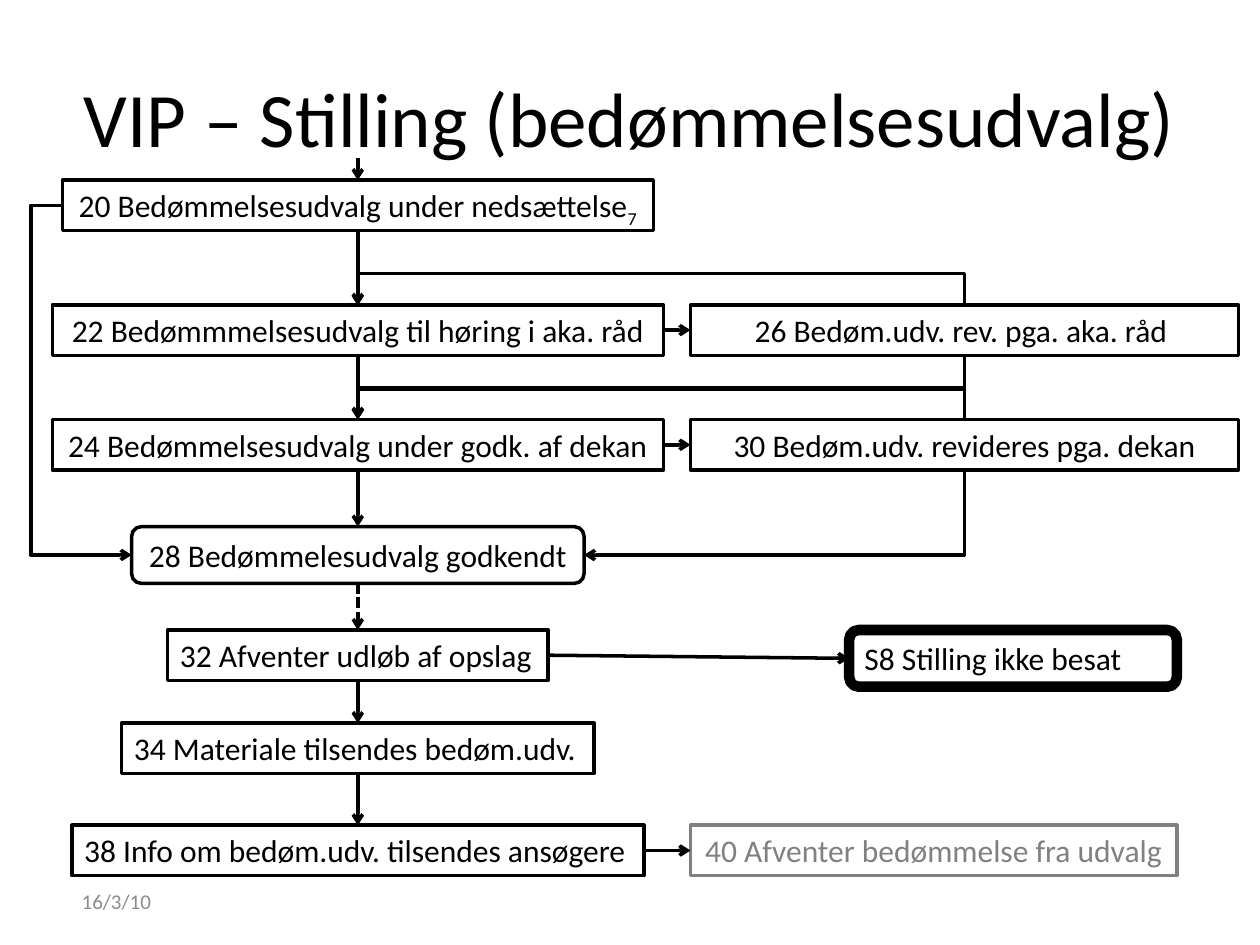
from lxml.etree import SubElement
from pptx import Presentation
from pptx.dml.color import RGBColor as RGB
from pptx.enum.dml import MSO_LINE as DASH
from pptx.enum.shapes import MSO_CONNECTOR as CONN, MSO_SHAPE as SHAPE
from pptx.enum.text import MSO_ANCHOR as ANCHOR, MSO_AUTO_SIZE as FIT, PP_ALIGN as ALIGN
from pptx.oxml.ns import qn
from pptx.util import Inches, Pt

THEME = {
    "font": "Calibri",
    "ink": RGB(0x00, 0x00, 0x00),
    "muted": RGB(0x80, 0x80, 0x80),
    "date": RGB(0x8C, 0x8C, 0x8C),
    "title": Pt(44), "body": Pt(18), "small": Pt(12),
    "line": Pt(2), "heavy": Pt(6),
}

prs = Presentation()
prs.slide_width, prs.slide_height = Inches(10), Inches(7.5)
U = prs.slide_width / 100
s = prs.slides.add_slide(prs.slide_layouts[5])


def write(sp, text, size, color, align, **frame):
    tf = sp.text_frame
    for key, value in frame.items():
        setattr(tf, key, value)
    p = tf.paragraphs[0]
    p.alignment = align
    r = p.add_run()
    r.text = text
    fmt = {"name": THEME["font"], "size": THEME[size]}
    for key, value in fmt.items():
        setattr(r.font, key, value)
    r.font.color.rgb = THEME[color]
    return p


def style(c, dash=None):
    c.line.color.rgb = THEME["ink"]
    c.line.width = THEME["line"]
    if dash:
        c.line.dash_style = dash
    SubElement(c.line._get_or_add_ln(), qn("a:tailEnd"), type="arrow")
    SubElement(c.element.spPr, qn("a:effectLst"))


t = s.shapes.title
place = {"left": 5, "top": 3, "width": 90, "height": 12.5}
for key, value in place.items():
    setattr(t, key, int(value * U))
write(t, "VIP – Stilling (bedømmelsesudvalg)", "title", "ink", ALIGN.CENTER,
      vertical_anchor=ANCHOR.MIDDLE)

AXIS, RIGHT, BOX_H, ROUND_H = 28.4, 54.8, 4, 4.5
ROWS = {"20": 14.3, "22": 24.2, "24": 33.3, "28": 41.8, "32": 50, "34": 57.4, "38": 65.5}
C, L = ALIGN.CENTER, ALIGN.LEFT
boxes = [
    ("20", "Bedømmelsesudvalg under nedsættelse", "20", None, 46.9, C, False),
    ("22", "Bedømmmelsesudvalg til høring i aka. råd", "22", None, 48.5, C, False),
    ("24", "Bedømmelsesudvalg under godk. af dekan", "24", None, 48.5, C, False),
    ("28", "Bedømmelesudvalg godkendt", "28", None, 35.9, C, False),
    ("32", "Afventer udløb af opslag", "32", None, 30.2, L, False),
    ("34", "Materiale tilsendes bedøm.udv.", "34", None, 37.5, L, False),
    ("38", "Info om bedøm.udv. tilsendes ansøgere", "38", None, 45.4, L, True),
    ("26", "Bedøm.udv. rev. pga. aka. råd ", "22", RIGHT, 43.5, C, True),
    ("30", "Bedøm.udv. revideres pga. dekan", "24", RIGHT, 43.5, C, True),
    ("40", "Afventer bedømmelse fra udvalg", "38", RIGHT, 38.6, C, False),
    ("S8", "Stilling ikke besat", "32", 67.4, 26, L, True),
]
steps = {}
for key, label, row, left, width, align, wrap in boxes:
    rounded = key in ("28", "S8")
    left = AXIS - width / 2 if left is None else left
    kind = SHAPE.FLOWCHART_ALTERNATE_PROCESS if rounded else SHAPE.FLOWCHART_PROCESS
    height = ROUND_H if rounded else BOX_H
    sp = s.shapes.add_shape(kind, *(int(v * U) for v in (left, ROWS[row], width, height)))
    sp.shadow.inherit = False
    sp.fill.background()
    color = "muted" if key == "40" else "ink"
    sp.line.color.rgb = THEME[color]
    sp.line.width = THEME["heavy" if key == "S8" else "line"]
    p = write(sp, f"{key} {label}", "body", color, align, word_wrap=wrap,
              auto_size=FIT.SHAPE_TO_FIT_TEXT, vertical_anchor=ANCHOR.TOP)
    if key == "20":
        r = p.add_run()
        r.text = "7"
        for attr, value in {"name": THEME["font"], "size": THEME["body"]}.items():
            setattr(r.font, attr, value)
        r.font.color.rgb = THEME["ink"]
        r.font._element.set("baseline", "-25000")
    steps[key] = sp

TOP, WEST, BOTTOM, EAST = range(4)
c = s.shapes.add_connector(CONN.STRAIGHT, *(int(v * U) for v in (AXIS, 12.5, AXIS, ROWS["20"])))
c.end_connect(steps["20"], TOP)
style(c)

chain = list(ROWS)
links = [(a, BOTTOM, b, TOP) for a, b in zip(chain, chain[1:])]
links += [(a, EAST, b, WEST) for a, b in (("22", "26"), ("24", "30"), ("32", "S8"), ("38", "40"))]
for a, start, b, end in links:
    c = s.shapes.add_connector(CONN.STRAIGHT, 0, 0, 0, 0)
    c.begin_connect(steps[a], start)
    c.end_connect(steps[b], end)
    style(c, DASH.SQUARE_DOT if a == "28" else None)

elbows = [
    ("20", WEST, "28", WEST, 0, "", "bentConnector3", -2.5),
    ("26", TOP, "22", TOP, 270, "HV", "bentConnector3", -2.5),
    ("26", BOTTOM, "24", TOP, 90, "", "bentConnector3", 2.55),
    ("30", TOP, "24", TOP, 270, "V", "bentConnector3", 2.5),
    ("30", BOTTOM, "28", EAST, 90, "", "bentConnector2", None),
]
for a, start, b, end, turn, flips, preset, detour in elbows:
    c = s.shapes.add_connector(CONN.ELBOW, 0, 0, 0, 0)
    c.begin_connect(steps[a], start)
    c.end_connect(steps[b], end)
    mid_x, mid_y = (c.begin_x + c.end_x) / 2, (c.begin_y + c.end_y) / 2
    w, h = abs(c.end_x - c.begin_x), abs(c.end_y - c.begin_y)
    if turn:
        w, h = max(h, int(0.1 * U)), w
    box = {"left": mid_x - w / 2, "top": mid_y - h / 2, "width": w, "height": h}
    for key, value in box.items():
        setattr(c, key, int(value))
    xfrm, geom = c.element.spPr.find(qn("a:xfrm")), c.element.spPr.find(qn("a:prstGeom"))
    xfrm.set("rot", str(turn * 60000))
    for axis in "HV":
        xfrm.set(f"flip{axis}", str(int(axis in flips)))
    geom.set("prst", preset)
    if detour is not None:
        SubElement(geom.find(qn("a:avLst")), qn("a:gd"), name="adj1",
                   fmla=f"val {round(detour * U / w * 100000)}")
    style(c)

sp = s.shapes.add_textbox(*(int(v * U) for v in (5.5, 69.5, 23.3, 4)))
write(sp, "16/3/10", "small", "date", L, word_wrap=True, vertical_anchor=ANCHOR.MIDDLE)

prs.save("out.pptx")
